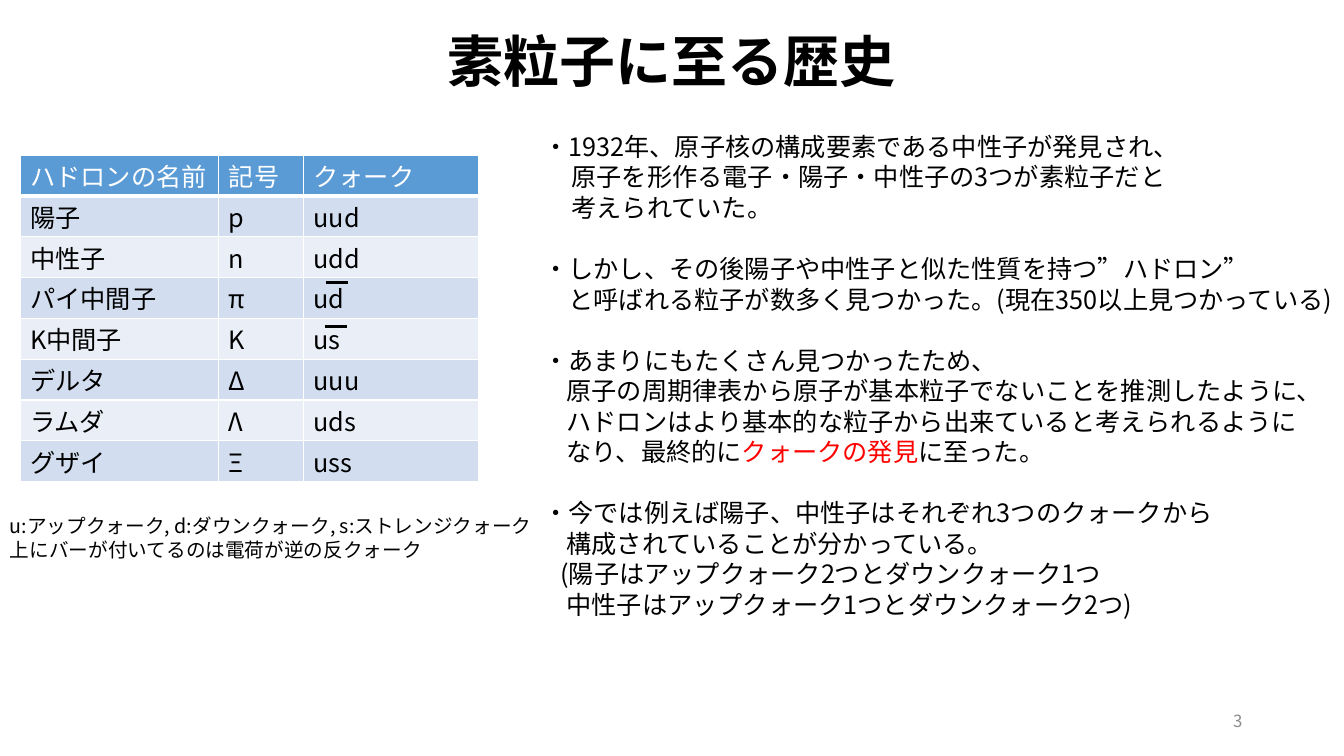
from dataclasses import dataclass

from lxml.etree import SubElement
from pptx import Presentation
from pptx.dml.color import RGBColor
from pptx.enum.shapes import MSO_CONNECTOR
from pptx.enum.text import MSO_ANCHOR, PP_ALIGN
from pptx.oxml.ns import qn
from pptx.util import Pt

EMU_PER_PX = 9144
FONT = "Noto Sans CJK JP"
BLACK, WHITE, RED, GREY = "000000", "FFFFFF", "FF0000", "8C8C8C"
HEADER_FILL, ROW_FILLS = "5B9BD5", ("D2DEEF", "EAEFF7")
LINE_FACTOR = 1.21


@dataclass
class Frame:
    left: int
    top: int
    width: int
    height: int

    def emu(self) -> list[int]:
        return [px(n) for n in (self.left, self.top, self.width, self.height)]


@dataclass
class Line:
    """One line of text; words equal to highlight are shown in red."""
    text: str
    indent: int = 0
    highlight: str = ""


@dataclass
class Bar:
    """Overline that marks an antiquark."""
    left: int
    top: int
    width: int = 22


HADRONS = [
    ("ハドロンの名前", "記号", "クォーク"),
    ("陽子", "p", "uud"),
    ("中性子", "n", "udd"),
    ("パイ中間子", "π", "ud"),
    ("K中間子", "K", "us"),
    ("デルタ", "Δ", "uuu"),
    ("ラムダ", "Λ", "uds"),
    ("グザイ", "Ξ", "uss"),
]
COLUMN_WIDTHS = (197, 84, 174)
ANTIQUARK_BARS = [Bar(323, 280), Bar(322, 324)]

HISTORY = [
    [
        Line("・1932年、原子核の構成要素である中性子が発見され、"),
        Line("原子を形作る電子・陽子・中性子の3つが素粒子だと", 28),
        Line("考えられていた。", 28),
    ],
    [
        Line("・しかし、その後陽子や中性子と似た性質を持つ”ハドロン”"),
        Line("と呼ばれる粒子が数多く見つかった。(現在350以上見つかっている)", 25),
    ],
    [
        Line("・あまりにもたくさん見つかったため、"),
        Line("原子の周期律表から原子が基本粒子でないことを推測したように、", 23),
        Line("ハドロンはより基本的な粒子から出来ていると考えられるように", 23),
        Line("なり、最終的にクォークの発見に至った。", 23, "クォークの発見"),
    ],
    [
        Line("・今では例えば陽子、中性子はそれぞれ3つのクォークから"),
        Line("構成されていることが分かっている。", 23),
        Line("(陽子はアップクォーク2つとダウンクォーク1つ", 17),
        Line("中性子はアップクォーク1つとダウンクォーク2つ)", 23),
    ],
]
LEGEND = [
    Line("u:アップクォーク, d:ダウンクォーク, s:ストレンジクォーク"),
    Line("上にバーが付いてるのは電荷が逆の反クォーク"),
]


def px(length: int) -> int:
    return length * EMU_PER_PX


def color(value: str) -> RGBColor:
    return RGBColor.from_string(value)


def format_span(span, size: int, hue: str, bold: bool) -> None:
    span.font.size = Pt(size)
    span.font.bold = bold
    span.font.name = FONT
    span.font.color.rgb = color(hue)
    SubElement(span.font._element, qn("a:ea"), typeface=FONT)


def write_line(para, line: Line, size: int, hue: str = BLACK, bold: bool = False) -> None:
    before, mark, after = line.text.partition(line.highlight) if line.highlight else (line.text, "", "")
    para.line_spacing = Pt(round(size * LINE_FACTOR, 1))
    properties = para._p.get_or_add_pPr()
    properties.set("marL", "0")
    properties.set("indent", str(px(line.indent)))
    for text, shade in ((before, hue), (mark, RED), (after, hue)):
        if text:
            span = para.add_run()
            span.text = text
            format_span(span, size, shade, bold)


def add_text(page, frame: Frame, groups: list[list[Line]], size: int, hue: str = BLACK):
    """Add a text box whose groups of lines are one empty line apart."""
    box = page.shapes.add_textbox(*frame.emu())
    text_frame = box.text_frame
    text_frame.word_wrap = True
    for group_index, group in enumerate(groups):
        for line_index, line in enumerate(group):
            first = group_index == line_index == 0
            para = text_frame.paragraphs[0] if first else text_frame.add_paragraph()
            write_line(para, line, size, hue)
            if group_index and not line_index:
                para.space_before = Pt(round(size * LINE_FACTOR, 1))
    return box


def set_title(page, frame: Frame, text: str) -> None:
    title = page.shapes.title
    title.left, title.top, title.width, title.height = frame.emu()
    title.text_frame.word_wrap = False
    title.text_frame.vertical_anchor = MSO_ANCHOR.TOP
    para = title.text_frame.paragraphs[0]
    write_line(para, Line(text), 40, bold=True)
    para.alignment = PP_ALIGN.CENTER


def set_borders(cell, bottom_width: int) -> None:
    properties = cell._tc.get_or_add_tcPr()
    for side, width in (("L", 1), ("R", 1), ("T", 1), ("B", bottom_width)):
        border = SubElement(properties, qn(f"a:ln{side}"), w=str(Pt(width)))
        fill = SubElement(border, qn("a:solidFill"))
        SubElement(fill, qn("a:srgbClr"), val=WHITE)


def add_hadron_table(page, frame: Frame) -> None:
    table = page.shapes.add_table(len(HADRONS), len(COLUMN_WIDTHS), *frame.emu()).table
    for column, width in zip(table.columns, COLUMN_WIDTHS):
        column.width = px(width)
    for row_index, hadron in enumerate(HADRONS):
        header = row_index == 0
        for column_index, text in enumerate(hadron):
            cell = table.cell(row_index, column_index)
            cell.margin_top, cell.margin_bottom = px(8), px(2)
            set_borders(cell, 3 if header else 1)
            cell.fill.solid()
            cell.fill.fore_color.rgb = color(HEADER_FILL if header else ROW_FILLS[(row_index - 1) % 2])
            write_line(cell.text_frame.paragraphs[0], Line(text), 18, WHITE if header else BLACK)


def add_bar(page, bar: Bar) -> None:
    y = px(bar.top)
    connector = page.shapes.add_connector(MSO_CONNECTOR.STRAIGHT, px(bar.left), y, px(bar.left + bar.width), y)
    connector.line.color.rgb = color(BLACK)
    connector.line.width = Pt(2)
    SubElement(connector._element.spPr, qn("a:effectLst"))


def main() -> None:
    deck = Presentation()
    deck.slide_width, deck.slide_height = px(1333), px(750)
    page = deck.slides.add_slide(deck.slide_layouts[5])
    set_title(page, Frame(431, 21, 470, 77), "素粒子に至る歴史")
    add_text(page, Frame(529, 125, 813, 495), HISTORY, 18)
    add_text(page, Frame(0, 505, 543, 57), [LEGEND], 14)
    add_hadron_table(page, Frame(20, 154, sum(COLUMN_WIDTHS), 324))
    for bar in ANTIQUARK_BARS:
        add_bar(page, bar)
    number = add_text(page, Frame(942, 695, 300, 40), [[Line("3")]], 12, GREY)
    number.text_frame.vertical_anchor = MSO_ANCHOR.MIDDLE
    number.text_frame.paragraphs[0].alignment = PP_ALIGN.RIGHT
    deck.save("out.pptx")


if __name__ == "__main__":
    main()
